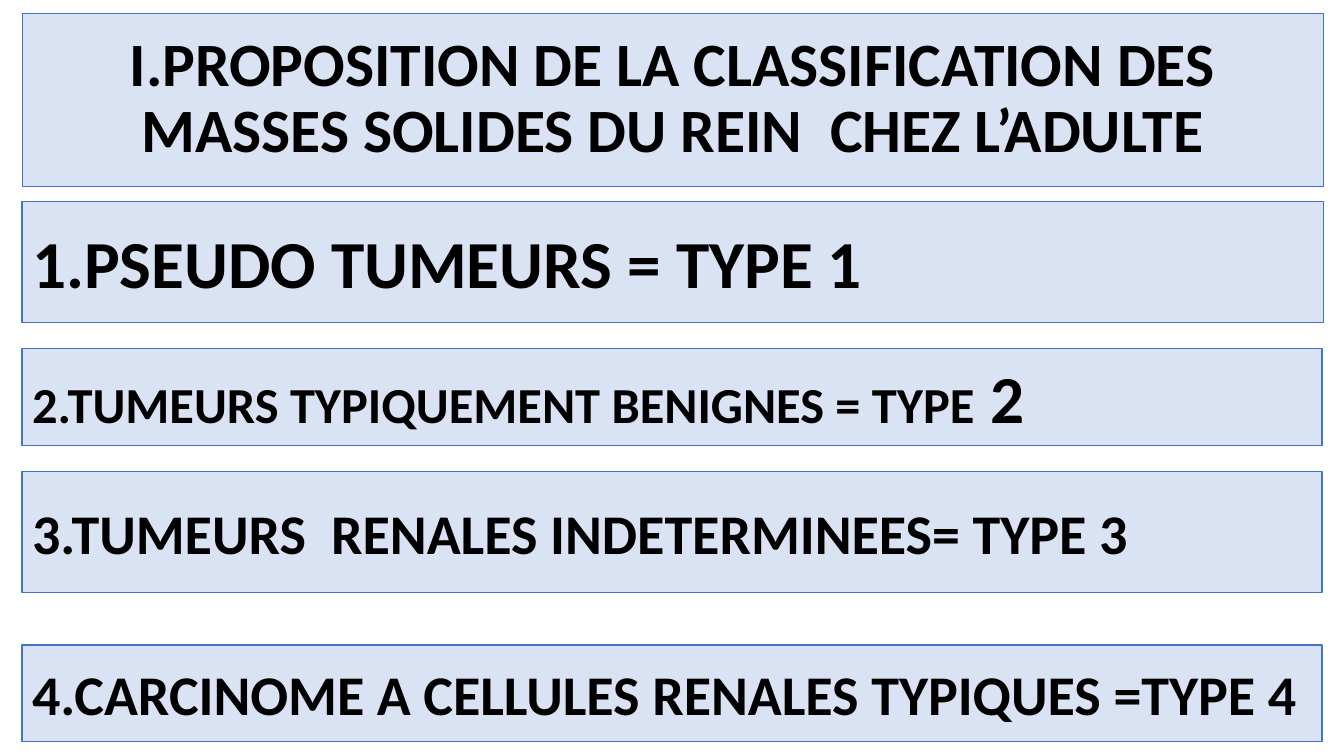
import pptx
import pptx.util
import pptx.dml.color
import pptx.enum.shapes
import pptx.enum.text

PX = pptx.util.Inches(1) // 100
PALE_BLUE = pptx.dml.color.RGBColor(0xDA, 0xE3, 0xF3)
BORDER_BLUE = pptx.dml.color.RGBColor(0x44, 0x72, 0xC4)
BLACK = pptx.dml.color.RGBColor(0, 0, 0)
LEFT_ALIGN = pptx.enum.text.PP_ALIGN.LEFT
CENTER = pptx.enum.text.PP_ALIGN.CENTER

TYPES = [
    ((22, 200, 1291, 120), [("1.PSEUDO TUMEURS = TYPE 1", 48)]),
    ((22, 346, 1289, 96), [("2.TUMEURS TYPIQUEMENT BENIGNES = TYPE", 36), (" 2", 48)]),
    ((22, 468, 1289, 120), [("3.TUMEURS  RENALES INDETERMINEES= TYPE 3", 40)]),
    ((22, 640, 1289, 96), [("4.CARCINOME A CELLULES RENALES TYPIQUES =TYPE 4", 40)]),
]


def add_text(paragraph, text, size, font="Calibri", color=BLACK, bold=True):
    run = paragraph.add_run()
    run.text = text
    run.font.name = font
    run.font.size = pptx.util.Pt(size)
    run.font.bold = bold
    run.font.color.rgb = color


def fill_panel(panel, parts, align=LEFT_ALIGN, spacing=1.0, border=1):
    panel.fill.solid()
    panel.fill.fore_color.rgb = PALE_BLUE
    panel.line.color.rgb = BORDER_BLUE
    panel.line.width = pptx.util.Pt(border)
    frame = panel.text_frame
    frame.word_wrap = True
    frame.auto_size = pptx.enum.text.MSO_AUTO_SIZE.NONE
    frame.vertical_anchor = pptx.enum.text.MSO_ANCHOR.MIDDLE
    paragraph = frame.paragraphs[0]
    paragraph.alignment = align
    paragraph.line_spacing = spacing
    for text, size in parts:
        add_text(paragraph, text, size)


def place_heading(slide, box):
    heading = slide.shapes.title
    heading.left, heading.top, heading.width, heading.height = (n * PX for n in box)
    text = "I.PROPOSITION DE LA CLASSIFICATION DES MASSES SOLIDES DU REIN  CHEZ L’ADULTE"
    fill_panel(heading, [(text, 44)], align=CENTER, spacing=0.9, border=0.75)


def add_tumour_type(slide, box, parts):
    panel = slide.shapes.add_shape(
        pptx.enum.shapes.MSO_SHAPE.RECTANGLE, *(n * PX for n in box)
    )
    panel.shadow.inherit = False
    fill_panel(panel, parts)


def main():
    deck = pptx.Presentation()
    deck.slide_width = 1333 * PX
    deck.slide_height = 750 * PX
    slide = deck.slides.add_slide(deck.slide_layouts[5])
    place_heading(slide, (22, 13, 1291, 172))
    for box, parts in TYPES:
        add_tumour_type(slide, box, parts)
    deck.save("out.pptx")


if __name__ == "__main__":
    main()
